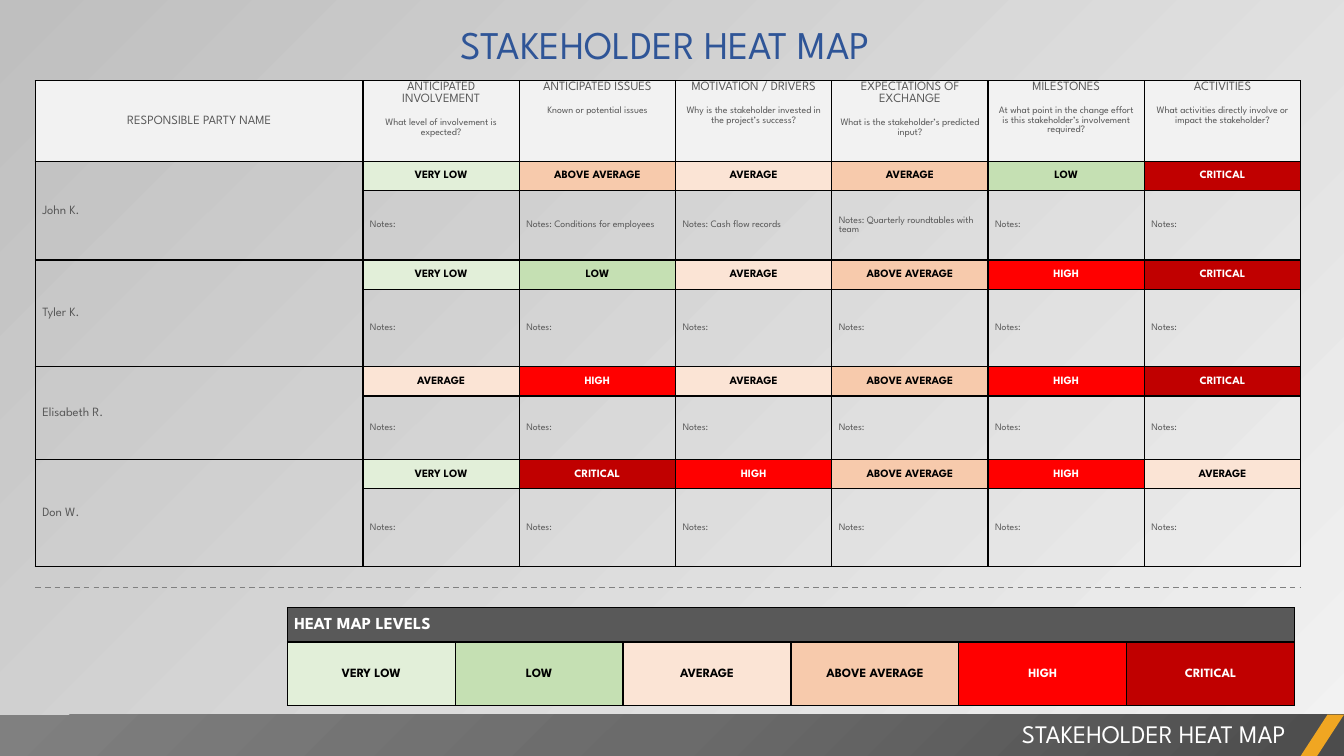
import pptx
import pptx.dml.color
import pptx.enum.dml
import pptx.enum.shapes
import pptx.enum.text
import pptx.oxml
import pptx.oxml.ns
import pptx.util

PX = 9144
FONT = "League Spartan"
TITLE = "STAKEHOLDER HEAT MAP"
COLORS = {
    "title": "2F5597", "text": "595959", "header": "F2F2F2", "black": "000000",
    "white": "FFFFFF", "accent": "F0A622", "divider": "808080",
    "very low": "E2EFD9", "low": "C5E0B3", "average": "FBE4D5",
    "above average": "F7CAAC", "high": "FF0000", "critical": "C00000",
    "back light": "F2F2F2", "back dark": "BFBFBF",
    "bar dark": "4C4C4C", "bar middle": "6B6B6B", "bar light": "808080",
}
LEVELS = ["very low", "low", "average", "above average", "high", "critical"]
TOPICS = [
    ("ANTICIPATED INVOLVEMENT", "What level of involvement is expected?"),
    ("ANTICIPATED ISSUES", "Known or potential issues"),
    ("MOTIVATION / DRIVERS", "Why is the stakeholder invested in the project’s success?"),
    ("EXPECTATIONS OF EXCHANGE", "What is the stakeholder’s predicted input?"),
    ("MILESTONES", "At what point in the change effort is this stakeholder’s involvement required?"),
    ("ACTIVITIES", "What activities directly involve or impact the stakeholder?"),
]
STAKEHOLDERS = [
    ("John K.", 69, ["very low", "above average", "average", "average", "low", "critical"]),
    ("Tyler K.", 77, ["very low", "low", "average", "above average", "high", "critical"]),
    ("Elisabeth R.", 63, ["average", "high", "average", "above average", "high", "critical"]),
    ("Don W.", 77, ["very low", "critical", "high", "above average", "high", "average"]),
]
NOTES = {
    ("John K.", 1): "Conditions for employees",
    ("John K.", 2): "Cash flow records",
    ("John K.", 3): "Quarterly roundtables with team",
}
SHADES = {("John K.", 3): "above average"}
ALIGN = pptx.enum.text.PP_ALIGN
MIDDLE = pptx.enum.text.MSO_ANCHOR.MIDDLE


def rgb(name):
    """Return the named colour."""
    return pptx.dml.color.RGBColor.from_string(COLORS[name])


def scaled(*lengths):
    """Turn px lengths into EMU."""
    return [pptx.util.Emu(length * PX) for length in lengths]


def write(paragraph, text, size, color, bold=False, align=ALIGN.LEFT):
    """Set and format the text of a paragraph."""
    paragraph.text = text
    paragraph.alignment = align
    font = paragraph.runs[0].font
    font.name, font.size, font.bold = FONT, pptx.util.Pt(size), bold
    font.color.rgb = rgb(color)


def paint_gradient(solid, stops, direction):
    """Replace a solid fill element by a gradient of (position, colour, opacity) stops."""
    marks = "".join(
        f'<a:gs pos="{position * 1000}"><a:srgbClr val="{COLORS[color]}">'
        f'<a:alpha val="{opacity * 1000}"/></a:srgbClr></a:gs>'
        for position, color, opacity in stops)
    gradient = pptx.oxml.parse_xml(
        f'<a:gradFill {pptx.oxml.ns.nsdecls("a")} rotWithShape="1">'
        f"<a:gsLst>{marks}</a:gsLst>{direction}</a:gradFill>")
    solid.getparent().replace(solid, gradient)


def add_background(slide):
    """Paint the diagonal grey background."""
    slide.background.fill.solid()
    paint_gradient(slide.element.xpath(".//p:bgPr/a:solidFill")[0],
                   [(0, "back light", 40), (100, "back dark", 100)],
                   '<a:lin ang="13500000" scaled="0"/>')


def add_text(slide, box, text, size, color, align):
    """Place one line of text in a box."""
    frame = slide.shapes.add_textbox(*scaled(*box)).text_frame
    frame.word_wrap = True
    write(frame.paragraphs[0], text, size, color, align=align)


def add_block(slide, kind, box, color):
    """Place a plain filled shape."""
    block = slide.shapes.add_shape(kind, *scaled(*box))
    block.shadow.inherit = False
    block.fill.solid()
    block.fill.fore_color.rgb = rgb(color)
    block.line.fill.background()
    return block


def add_footer(slide, left, top, width, height):
    """Draw the bottom bar with its slanted accent and caption."""
    kinds = pptx.enum.shapes.MSO_SHAPE
    bar = add_block(slide, kinds.RECTANGLE, (left, top, width, height), "bar middle")
    paint_gradient(bar.element.spPr.find(pptx.oxml.ns.qn("a:solidFill")),
                   [(0, "bar dark", 100), (50, "bar middle", 100), (100, "bar light", 100)],
                   '<a:path path="circle"><a:fillToRect l="100000" t="100000"/></a:path>')
    accent = add_block(slide, kinds.PARALLELOGRAM,
                       (left + width - 43, top, 43, height), "accent")
    accent.adjustments[0] = 0.65
    add_text(slide, (left + width - 808, top - 1, 760, 40), TITLE, 18, "white", ALIGN.RIGHT)


def add_grid(slide, box, column_widths, row_heights):
    """Add a bordered table without fills and return it."""
    table = slide.shapes.add_table(
        len(row_heights), len(column_widths), *scaled(*box)).table
    table.first_row = table.horz_banding = False
    for column, width in zip(table.columns, column_widths):
        column.width = width
    for row, height in zip(table.rows, scaled(*row_heights)):
        row.height = height
    for cell in table.iter_cells():
        cell.margin_left = cell.margin_right = pptx.util.Emu(7 * PX)
        cell.margin_top = cell.margin_bottom = 0
        cell.vertical_anchor = MIDDLE
        cell.fill.background()
        for place, side in enumerate(("lnL", "lnR", "lnT", "lnB")):
            cell._tc.get_or_add_tcPr().insert(place, pptx.oxml.parse_xml(
                f'<a:{side} {pptx.oxml.ns.nsdecls("a")} w="12700"><a:solidFill>'
                f'<a:srgbClr val="{COLORS["black"]}"/></a:solidFill></a:{side}>'))
    return table


def fill_cell(cell, text, size, color, shade=None, bold=False, align=ALIGN.LEFT):
    """Write a table cell and shade it."""
    paragraph = cell.text_frame.paragraphs[0]
    write(paragraph, text, size, color, bold, align)
    paragraph.line_spacing = 1.07
    if shade:
        cell.fill.solid()
        cell.fill.fore_color.rgb = rgb(shade)


def fill_level(cell, level, size, shade=None):
    """Show a heat level in its colour."""
    color = "white" if level in ("high", "critical") else "black"
    fill_cell(cell, level.upper(), size, color, shade or level, True, ALIGN.CENTER)


def add_heat_map(slide, left, top, width, height):
    """Build the table of stakeholders and their ratings."""
    header, rating, topic_width = 80, 29, 155
    name_width = width - topic_width * len(TOPICS)
    heights = [header]
    for _, notes_height, _ in STAKEHOLDERS:
        heights += [rating, notes_height]
    table = add_grid(slide, (left, top, width, height),
                     scaled(name_width, *[topic_width] * len(TOPICS)), heights)
    fill_cell(table.cell(0, 0), "RESPONSIBLE PARTY NAME", 9, "text", "header",
              align=ALIGN.CENTER)
    for column, (topic, question) in enumerate(TOPICS, 1):
        cell = table.cell(0, column)
        fill_cell(cell, topic, 9, "text", "header", align=ALIGN.CENTER)
        cell.vertical_anchor = pptx.enum.text.MSO_ANCHOR.TOP
        prompt = cell.text_frame.add_paragraph()
        write(prompt, question, 7, "text", align=ALIGN.CENTER)
        prompt.line_spacing = 1.07
        prompt.space_before = pptx.util.Pt(9)
    for index, (name, _, levels) in enumerate(STAKEHOLDERS):
        row = 1 + 2 * index
        table.cell(row, 0).merge(table.cell(row + 1, 0))
        fill_cell(table.cell(row, 0), name, 9, "text")
        for topic, level in enumerate(levels):
            key = (name, topic)
            fill_level(table.cell(row, topic + 1), level, 8, SHADES.get(key))
            note = f"Notes: {NOTES.get(key, '')}".strip()
            fill_cell(table.cell(row + 1, topic + 1), note, 7, "text")


def add_legend(slide, left, top, width, height):
    """Build the key of heat levels."""
    heading = 34
    level_width = width * PX // len(LEVELS)
    table = add_grid(slide, (left, top, width, height),
                     [level_width] * len(LEVELS), [heading, height - heading])
    table.cell(0, 0).merge(table.cell(0, len(LEVELS) - 1))
    fill_cell(table.cell(0, 0), "HEAT MAP LEVELS", 12, "white", "text", True)
    for column, level in enumerate(LEVELS):
        fill_level(table.cell(1, column), level, 9)


def add_divider(slide, left, top, width):
    """Draw the dashed rule above the legend."""
    divider = slide.shapes.add_connector(
        pptx.enum.shapes.MSO_CONNECTOR.STRAIGHT, *scaled(left, top, left + width, top))
    divider.line.color.rgb = rgb("divider")
    divider.line.width = pptx.util.Pt(1)
    divider.line.dash_style = pptx.enum.dml.MSO_LINE.DASH
    divider.element.spPr.append(pptx.oxml.parse_xml(
        f'<a:effectLst {pptx.oxml.ns.nsdecls("a")}/>'))


def main():
    """Build and save the slide."""
    deck = pptx.Presentation()
    deck.slide_width, deck.slide_height = scaled(1333, 750)
    slide = deck.slides.add_slide(deck.slide_layouts[6])
    add_background(slide)
    add_footer(slide, 0, 709, 1333, 41)
    add_heat_map(slide, 35, 80, 1255, 482)
    add_text(slide, (29, 15, 1261, 57), TITLE, 28, "title", ALIGN.CENTER)
    add_legend(slide, 285, 603, 999, 97)
    add_divider(slide, 35, 583, 1255)
    deck.save("out.pptx")


if __name__ == "__main__":
    main()
